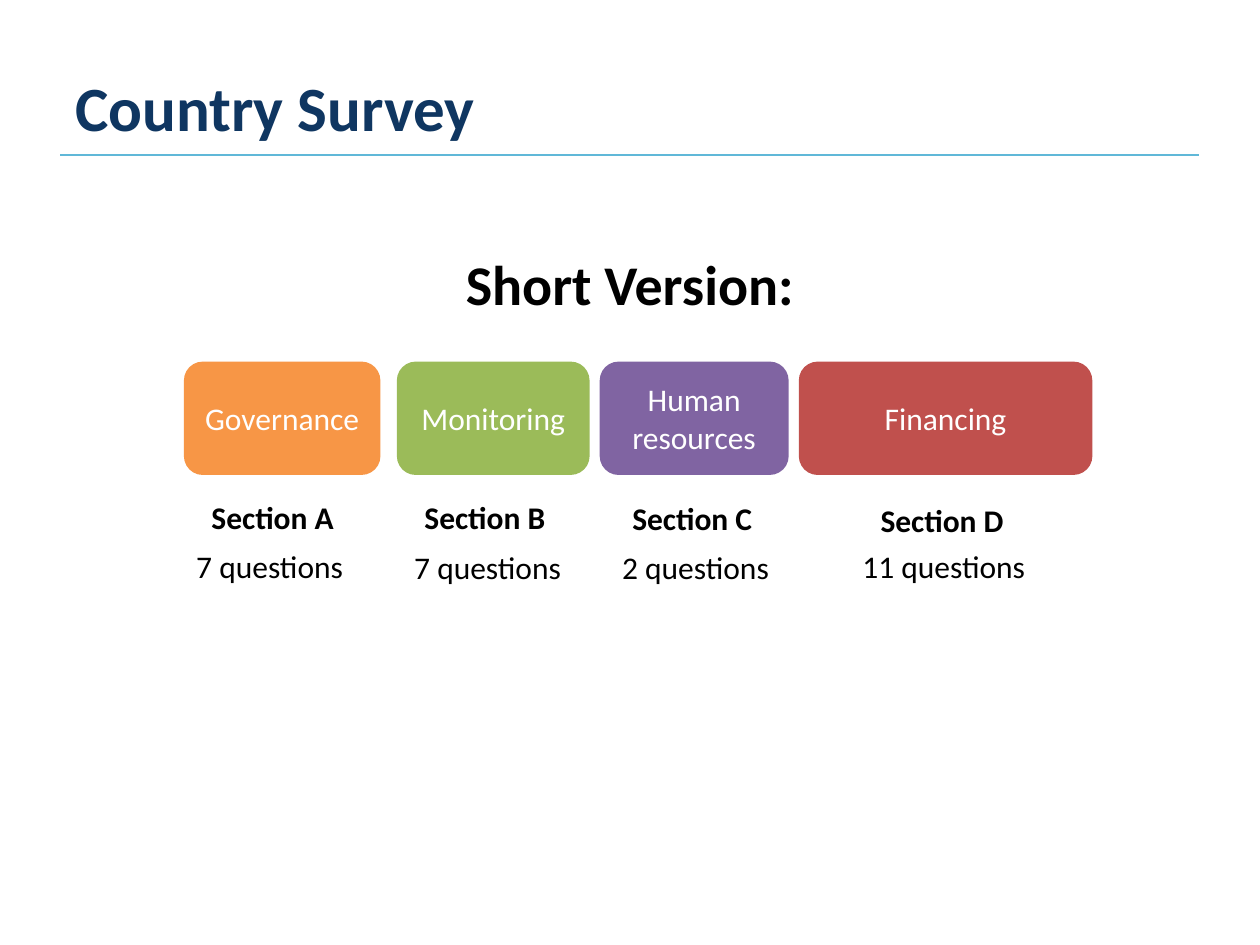
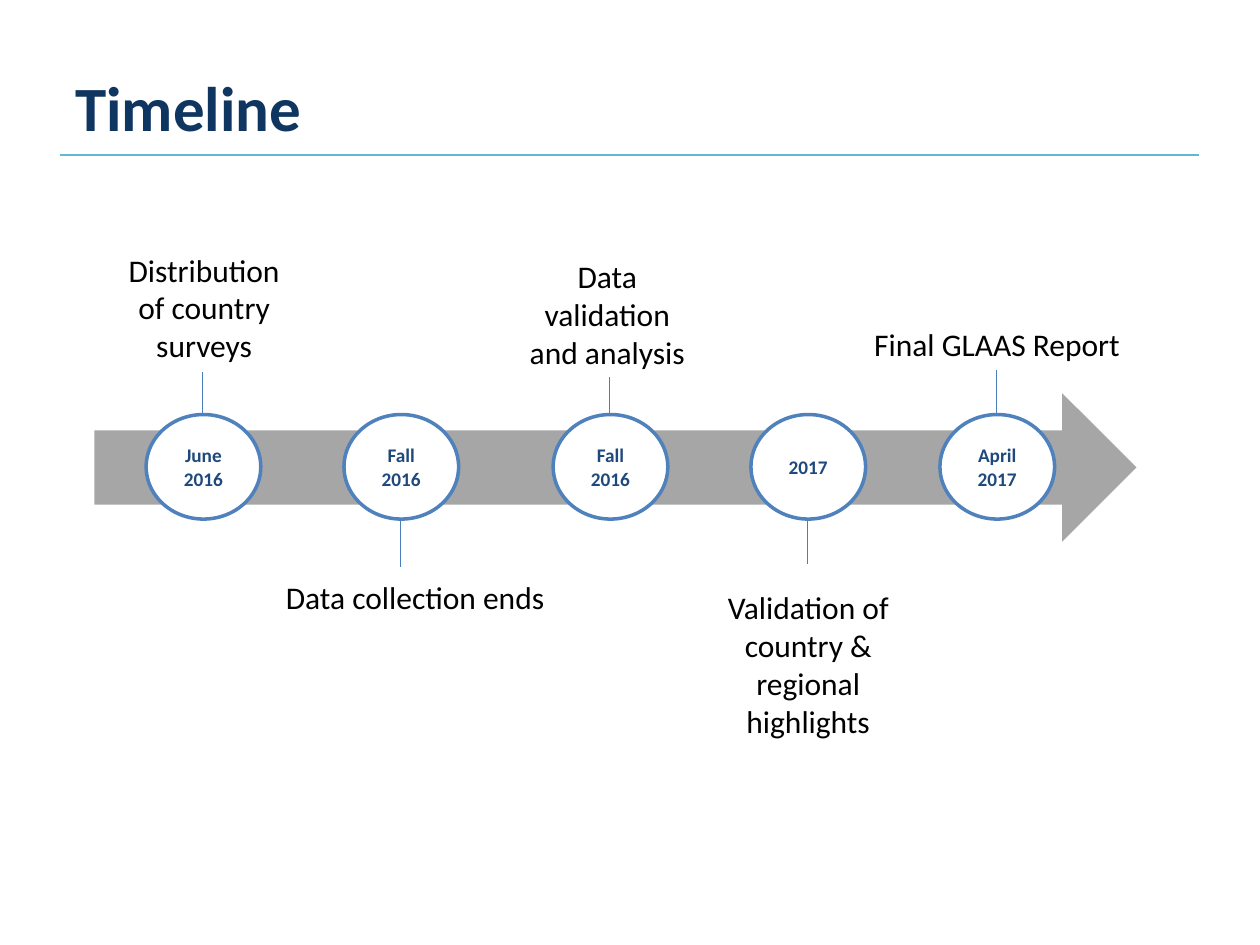
"""Builds the country survey and timeline slides."""
from lxml import etree
from pptx import Presentation
from pptx import util as u
from pptx.dml.color import RGBColor
from pptx.enum import shapes, text
from pptx.oxml.ns import qn

PX = 9144
NAVY, SKY, BLACK, WHITE = "0F3661", "60B8D8", "000000", "FFFFFF"
GREY, RING, STEM, DATE = "A6A6A6", "4F81BD", "4B7EBC", "1F497D"
LEFT, CENTER = text.PP_ALIGN.LEFT, text.PP_ALIGN.CENTER
MIDDLE = text.MSO_ANCHOR.MIDDLE
SHAPE = shapes.MSO_SHAPE

TITLE = {"size": u.Pt(36), "bold": True, "color": NAVY}
HEADING = {"size": u.Pt(32), "bold": True, "color": BLACK}
BODY = {"size": u.Pt(18), "bold": False, "color": BLACK}
SECTION = {**BODY, "bold": True}
THEME = {**BODY, "color": WHITE}
MILESTONE = {"size": u.Pt(11), "bold": True, "color": DATE}


def draw(page, kind, place, color, line=None, weight=1):
    """Add a text box (kind None), a connector ("line") or a filled shape."""
    place = [value * PX for value in place]
    if kind is None:
        return page.shapes.add_textbox(*place)
    if kind == "line":
        item = page.shapes.add_connector(shapes.MSO_CONNECTOR.STRAIGHT, *place)
        etree.SubElement(item._element.spPr, qn("a:effectLst"))
        line = color
    else:
        item = page.shapes.add_shape(kind, *place)
        item.shadow.inherit = False
        item.fill.solid()
        item.fill.fore_color.rgb = RGBColor.from_string(color)
    if line:
        item.line.color.rgb = RGBColor.from_string(line)
        item.line.width = u.Pt(weight)
    else:
        item.line.fill.background()
    return item


def write(box, words, style, align=CENTER, anchor=text.MSO_ANCHOR.TOP, wrap=True):
    """Fill a box with one paragraph per line of words."""
    frame = box.text_frame
    frame.word_wrap = wrap
    frame.vertical_anchor = anchor
    for number, line in enumerate(words.split("\n")):
        para = frame.add_paragraph() if number else frame.paragraphs[0]
        para.alignment = align
        span = para.add_run()
        span.text = line
        span.font.name = "Calibri"
        for name, value in style.items():
            if name == "color":
                span.font.color.rgb = RGBColor.from_string(value)
            else:
                setattr(span.font, name, value)


deck = Presentation()
deck.slide_width, deck.slide_height = 1000 * PX, 750 * PX

pages = []
for title in ("Country Survey", "Timeline"):
    page = deck.slides.add_slide(deck.slide_layouts[6])
    write(draw(page, None, (50, 30, 900, 109), None), title, TITLE, LEFT, MIDDLE)
    draw(page, "line", (48, 123, 952, 123), SKY)
    pages.append(page)
survey, timeline = pages

write(draw(survey, None, (50, 193, 900, 71), None), "Short Version:", HEADING)

# theme, colour, left, width, section left and top, question count, its left and top
themes = [
    ("Governance", "F79646", 146, 156, "A", 158, 390, 7, 138, 429),
    ("Monitoring", "9BBB59", 315, 153, "B", 327, 390, 7, 311, 430),
    ("Human resources", "8064A2", 476, 150, "C", 492, 391, 2, 476, 430),
    ("Financing", "C0504D", 634, 233, "D", 689, 393, 11, 673, 429),
]
for theme, color, left, width, letter, section_x, section_y, count, count_x, count_y in themes:
    block = draw(survey, SHAPE.ROUNDED_RECTANGLE, (left, 287, width, 90), color)
    write(block, theme, THEME, anchor=MIDDLE)
    label = draw(survey, None, (section_x, section_y, 126, 40), None)
    write(label, f"Section {letter}", SECTION, LEFT)
    questions = draw(survey, None, (count_x, count_y, 152, 40), None)
    write(questions, f"{count} questions", BODY)

draw(timeline, SHAPE.RIGHT_ARROW, (75, 312, 827, 118), GREY)

# date, circle left, outer end of stem, event, event place, whether it wraps
CIRCLE_TOP, CIRCLE_WIDTH, CIRCLE_HEIGHT = 329, 91, 83
milestones = [
    ("June\n2016", 116, 295, "Distribution of country surveys", (91, 194, 142, 101), True),
    ("Fall 2016", 273, 450, "Data collection ends", (217, 454, 228, 40), False),
    ("Fall 2016", 439, 299, "Data validation and analysis", (406, 199, 152, 101), True),
    ("2017", 596, 448, "Validation of country & regional highlights",
     (546, 462, 191, 131), True),
    ("April 2017", 746, 294, "Final GLAAS Report", (684, 253, 217, 40), False),
]
for date, left, stem_end, event, place, wrap in milestones:
    middle = left + CIRCLE_WIDTH // 2
    edge = CIRCLE_TOP if stem_end < CIRCLE_TOP else CIRCLE_TOP + CIRCLE_HEIGHT
    draw(timeline, "line", (middle, edge, middle, stem_end), STEM, weight=0.75)
    circle = draw(timeline, SHAPE.OVAL, (left, CIRCLE_TOP, CIRCLE_WIDTH, CIRCLE_HEIGHT),
                  WHITE, RING, 2)
    write(circle, date, MILESTONE, anchor=MIDDLE)
    caption = draw(timeline, None, place, None)
    write(caption, event, BODY, CENTER if wrap else LEFT, wrap=wrap)

deck.save("out.pptx")
